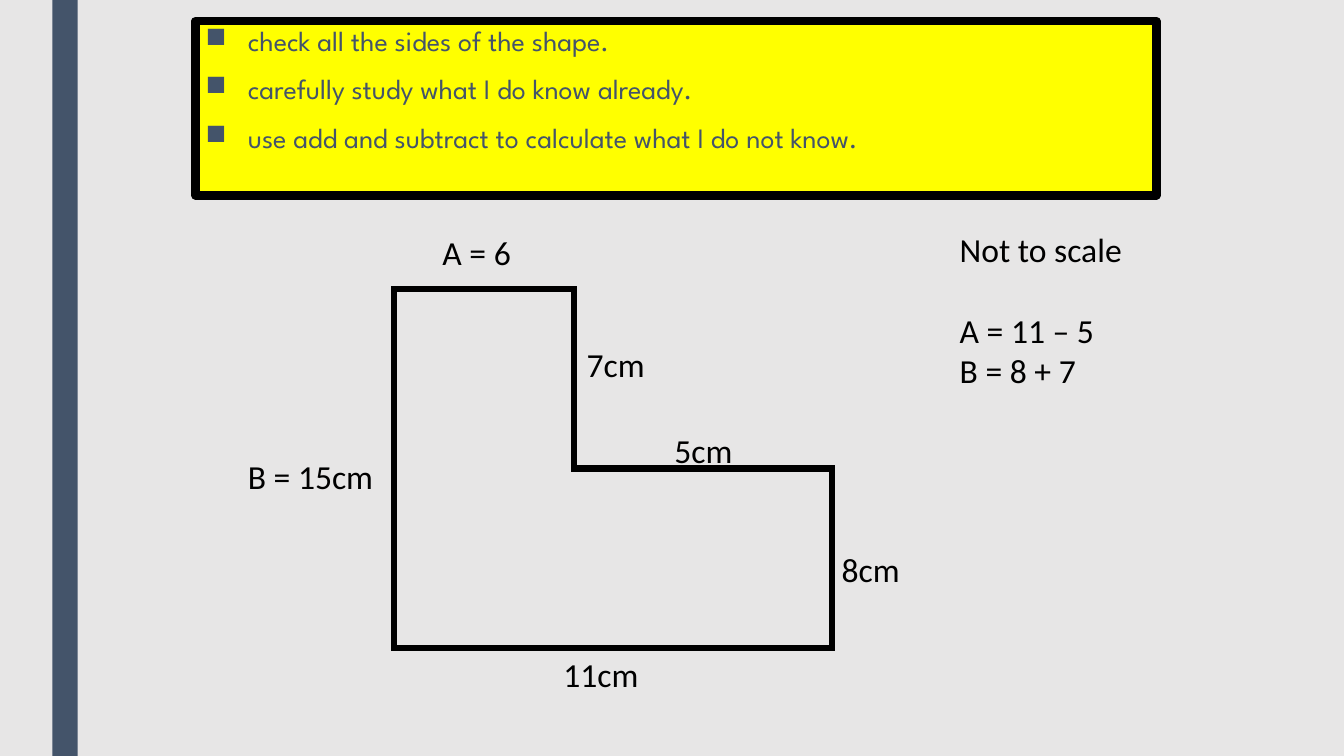
from lxml.etree import SubElement
from pptx import Presentation
from pptx.dml.color import RGBColor
from pptx.enum.shapes import MSO_SHAPE
from pptx.enum.text import MSO_ANCHOR, PP_ALIGN
from pptx.oxml.ns import qn
from pptx.util import Inches, Pt

BACKGROUND = RGBColor(0xE7, 0xE6, 0xE6)
SLATE = RGBColor(0x44, 0x54, 0x6A)
YELLOW = RGBColor(0xFF, 0xFF, 0x00)
BLACK = RGBColor(0x00, 0x00, 0x00)

STEPS = [
    "check all the sides of the shape.",
    "carefully study what I do know already.",
    "use add and subtract to calculate what I do not know.",
]
SIDE_LABELS = [
    ("8cm", 8.25, 5.4),
    ("11cm", 5.49, 6.44),
    ("5cm", 6.59, 4.22),
    ("7cm", 5.72, 3.36),
    ("A = 6", 4.29, 2.25),
    ("B = 15cm", 2.36, 4.47),
]


def write(p, text, font="Calibri", size=24, color=BLACK):
    r = p.add_run()
    r.text = text
    r.font.name = font
    r.font.size = Pt(size)
    r.font.color.rgb = color


def add_paragraph(tf, index):
    return tf.add_paragraph() if index else tf.paragraphs[0]


def add_box(slide, left, top, width, height, fill=None, line=0):
    sp = slide.shapes.add_shape(
        MSO_SHAPE.RECTANGLE,
        Inches(left), Inches(top), Inches(width), Inches(height))
    sp.shadow.inherit = False
    if fill is None:
        sp.fill.background()
    else:
        sp.fill.solid()
        sp.fill.fore_color.rgb = fill
    if line:
        sp.line.color.rgb = BLACK
        sp.line.width = Pt(line)
    else:
        sp.line.fill.background()
    return sp


def add_label(slide, lines, left, top, height=0.5, gap_before=None):
    sp = slide.shapes.add_textbox(
        Inches(left), Inches(top), Inches(1.93), Inches(height))
    tf = sp.text_frame
    tf.word_wrap = True
    for i, line in enumerate(lines):
        p = add_paragraph(tf, i)
        if i == gap_before:
            p.space_before = Pt(29)
        write(p, line)


def add_steps(slide):
    sp = add_box(slide, 1.94, 0.21, 9.53, 1.73, YELLOW, 6)
    SubElement(sp.line._get_or_add_ln(), qn("a:round"))
    tf = sp.text_frame
    tf.word_wrap = True
    tf.vertical_anchor = MSO_ANCHOR.TOP
    for i, step in enumerate(STEPS):
        p = add_paragraph(tf, i)
        p.alignment = PP_ALIGN.LEFT
        p.line_spacing = 0.94
        p.space_before = Pt(10)
        p.space_after = Pt(2)
        pPr = p._p.get_or_add_pPr()
        pPr.set("marL", str(Inches(0.42)))
        pPr.set("indent", str(Inches(-0.42)))
        SubElement(pPr, qn("a:buChar")).set("char", "■")
        write(p, step, font="League Spartan", size=20, color=SLATE)


def add_l_shape(slide):
    sp = add_box(slide, 4.3, 2.48, 3.56, 4.34, line=4.5)
    sp.rotation = 270
    # The corner preset and the flip have no public setter
    spPr = sp._element.spPr
    spPr.find(qn("a:prstGeom")).set("prst", "corner")
    spPr.find(qn("a:xfrm")).set("flipV", "1")
    SubElement(sp.line._get_or_add_ln(), qn("a:miter")).set("lim", "800000")


def main():
    prs = Presentation()
    prs.slide_width = Inches(13.33)
    prs.slide_height = Inches(7.5)
    slide = prs.slides.add_slide(prs.slide_layouts[6])
    slide.background.fill.solid()
    slide.background.fill.fore_color.rgb = BACKGROUND

    # Side band and success steps
    add_box(slide, 0.52, 0, 0.25, 7.5, SLATE)
    add_steps(slide)

    # Compound shape with its working and side lengths
    add_l_shape(slide)
    add_label(slide, ["Not to scale", "A = 11 – 5", "B = 8 + 7"],
              9.42, 2.22, height=1.72, gap_before=1)
    for text, left, top in SIDE_LABELS:
        add_label(slide, [text], left, top)

    prs.save("out.pptx")


if __name__ == "__main__":
    main()
